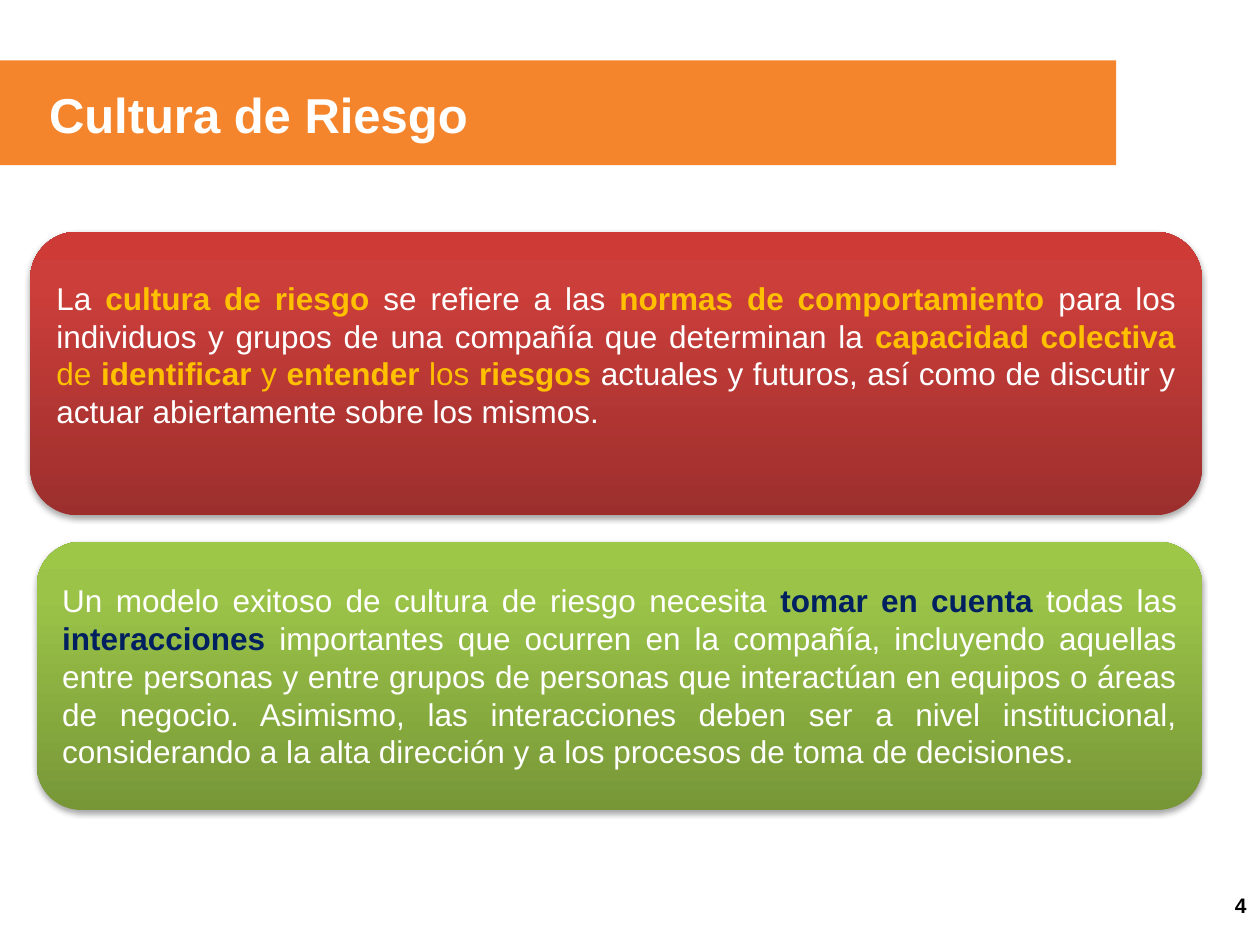
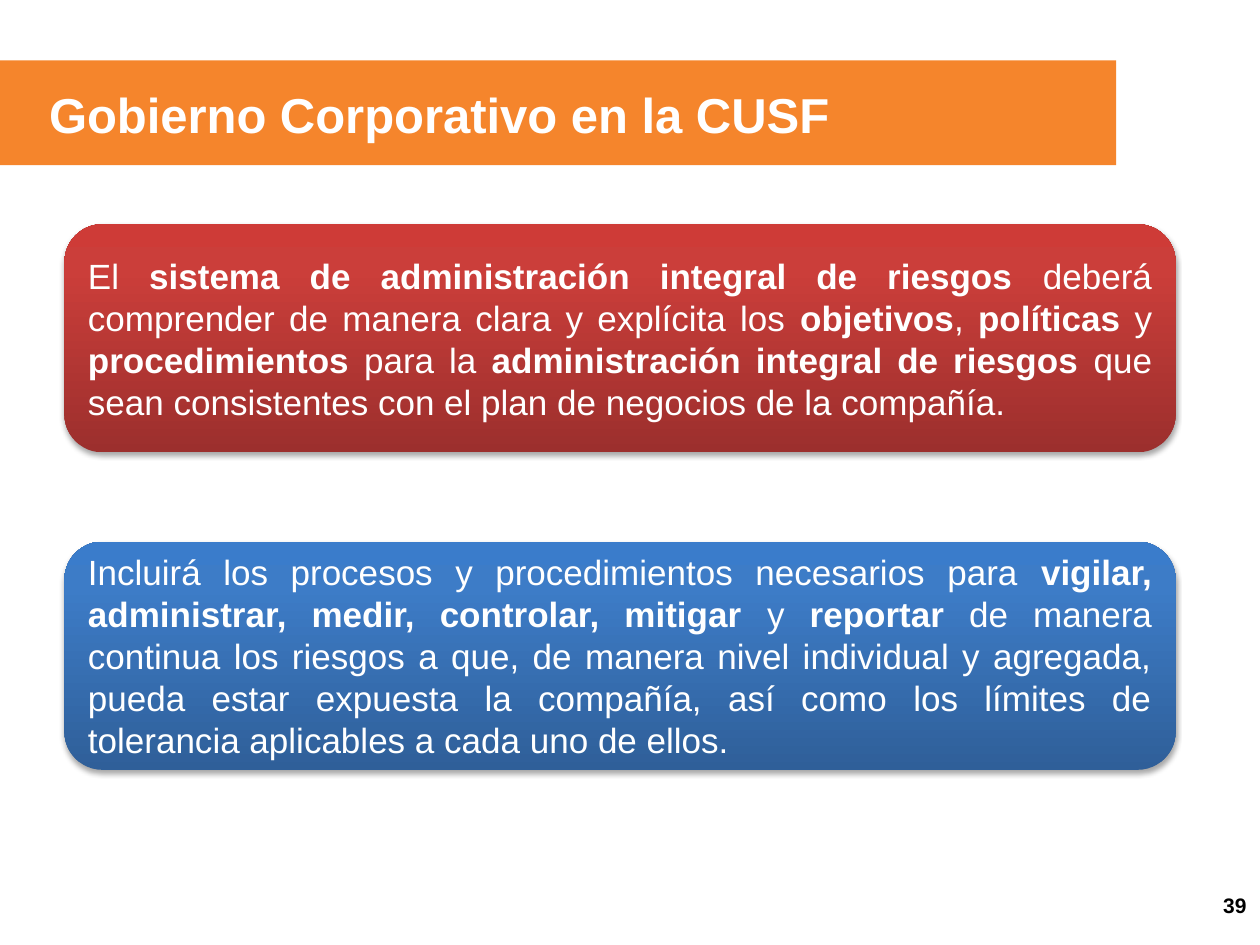
from copy import deepcopy
from dataclasses import dataclass
from typing import NamedTuple

from lxml.etree import SubElement
from pptx import Presentation
from pptx.dml.color import RGBColor
from pptx.enum.shapes import MSO_SHAPE as Shape
from pptx.enum.text import MSO_ANCHOR as Anchor, MSO_AUTO_SIZE as AutoSize, PP_ALIGN as Align
from pptx.oxml.ns import qn
from pptx.util import Cm, Pt

FONT = "Arial"
WHITE, BLACK, ORANGE = "FFFFFF", "000000", "F5852C"
GOLD, NAVY = "FFC000", "002060"

# Gradient colours from the bottom edge to the top edge
GRADIENT_POSITIONS = (0, 0.8, 1)
RED = ("9C2F2D", "CB3E3A", "CE3B37")
GREEN = ("779737", "9BC348", "9DC746")
BLUE = ("2F5F99", "3D7CC7", "3A7CCB")


class Area(NamedTuple):
    left: float
    top: float
    width: float
    height: float

    def lengths(self) -> list[Cm]:
        return [Cm(value) for value in self]


class Phrase(NamedTuple):
    text: str
    color: str = WHITE
    bold: bool = False


@dataclass
class Panel:
    area: Area
    gradient: tuple[str, str, str]
    size: int
    phrases: list[Phrase]
    bottom_inset: float = 0.13


@dataclass
class Page:
    title: str
    number: int
    panels: list[Panel]


BAND = Area(0, 1.22, 22.5, 2.11)
TITLE = Area(0.74, 1.57, 21.77, 1.45)
NUMBER = Area(19.46, 17.73, 5.92, 1.02)
LOWER_TOP = 10.92


def strong(text: str, color: str = WHITE) -> Phrase:
    return Phrase(text, color, True)


def rgb(color: str) -> RGBColor:
    return RGBColor.from_string(color)


def write(paragraph, phrases: list[Phrase], size: int, align=Align.LEFT) -> None:
    paragraph.alignment = align
    for phrase in phrases:
        run = paragraph.add_run()
        run.text = phrase.text
        font = run.font
        font.name, font.size, font.bold = FONT, Pt(size), phrase.bold
        font.color.rgb = rgb(phrase.color)


def add_label(slide, area: Area, phrase: Phrase, size: int, align=Align.LEFT, anchor=Anchor.TOP):
    frame = slide.shapes.add_textbox(*area.lengths()).text_frame
    frame.word_wrap = True
    frame.vertical_anchor = anchor
    write(frame.paragraphs[0], [phrase], size, align)
    return frame


def add_plain_shape(slide, kind: Shape, area: Area):
    """Add a preset shape without outline or inherited shadow."""
    shape = slide.shapes.add_shape(kind, *area.lengths())
    shape.shadow.inherit = False
    shape.line.fill.background()
    return shape


def fill_gradient(shape, colors: tuple[str, str, str]) -> None:
    shape.fill.gradient()
    shape.fill.gradient_angle = 90
    stop_list = next(shape.element.spPr.iter(qn("a:gsLst")))
    stop_list.append(deepcopy(stop_list[-1]))
    for stop, position, color in zip(shape.fill.gradient_stops, GRADIENT_POSITIONS, colors):
        stop.position = position
        stop.color.rgb = rgb(color)


def cast_shadow(shape) -> None:
    effects = shape.element.spPr.find(qn("a:effectLst"))
    shadow = SubElement(effects, qn("a:outerShdw"), blurRad=str(Pt(3.1)), dist=str(Pt(1.8)),
                        dir="5400000", rotWithShape="0")
    tint = SubElement(shadow, qn("a:srgbClr"), val=BLACK)
    SubElement(tint, qn("a:alpha"), val="35000")


def add_panel(slide, panel: Panel) -> None:
    shape = add_plain_shape(slide, Shape.ROUNDED_RECTANGLE, panel.area)
    fill_gradient(shape, panel.gradient)
    cast_shadow(shape)
    frame = shape.text_frame
    frame.word_wrap = True
    frame.vertical_anchor = Anchor.MIDDLE
    frame.margin_bottom = Cm(panel.bottom_inset)
    write(frame.paragraphs[0], panel.phrases, panel.size, Align.JUSTIFY)


def add_page(deck, page: Page) -> None:
    slide = deck.slides.add_slide(deck.slide_layouts[6])
    band = add_plain_shape(slide, Shape.RECTANGLE, BAND)
    band.fill.solid()
    band.fill.fore_color.rgb = rgb(ORANGE)
    title = add_label(slide, TITLE, strong(page.title), 28)
    title.auto_size = AutoSize.SHAPE_TO_FIT_TEXT
    add_label(slide, NUMBER, strong(str(page.number), BLACK), 12, Align.RIGHT, Anchor.MIDDLE)
    for panel in page.panels:
        add_panel(slide, panel)


PAGES = [
    Page("Cultura de Riesgo", 4, [
        Panel(Area(0.61, 4.67, 23.62, 5.72), RED, 18, [
            Phrase("La "),
            strong("cultura de riesgo ", GOLD),
            Phrase("se refiere a las "),
            strong("normas de comportamiento ", GOLD),
            Phrase("para los individuos y grupos de una compañía que determinan la "),
            strong("capacidad colectiva ", GOLD),
            Phrase("de ", GOLD),
            strong("identificar", GOLD),
            Phrase(" y ", GOLD),
            strong("entender", GOLD),
            Phrase(" los ", GOLD),
            strong("riesgos ", GOLD),
            Phrase("actuales y futuros, así como de discutir y actuar abiertamente "
                   "sobre los mismos."),
        ], bottom_inset=0.89),
        Panel(Area(0.74, LOWER_TOP, 23.5, 5.41), GREEN, 18, [
            Phrase("Un modelo exitoso de cultura de riesgo necesita "),
            strong("tomar en cuenta ", NAVY),
            Phrase("todas las "),
            strong("interacciones", NAVY),
            Phrase(" importantes que ocurren en la compañía, incluyendo aquellas entre personas "
                   "y entre grupos de personas que interactúan en equipos o áreas de negocio. "
                   "Asimismo, las interacciones deben ser a nivel institucional, considerando "
                   "a la alta dirección y a los procesos de toma de decisiones."),
        ]),
    ]),
    Page("Gobierno Corporativo en la CUSF", 39, [
        Panel(Area(1.3, 4.52, 22.4, 4.6), RED, 20, [
            Phrase("El "),
            strong("sistema de administración integral de riesgos "),
            Phrase("deberá comprender de manera clara y explícita los "),
            strong("objetivos"),
            Phrase(", "),
            strong("políticas "),
            Phrase("y "),
            strong("procedimientos"),
            Phrase(" para la "),
            strong("administración integral de riesgos "),
            Phrase("que sean consistentes con el plan de negocios de la compañía."),
        ]),
        Panel(Area(1.3, LOWER_TOP, 22.4, 4.6), BLUE, 20, [
            Phrase("Incluirá los procesos y procedimientos necesarios para "),
            strong("vigilar, administrar, medir, controlar, mitigar "),
            Phrase("y "),
            strong("reportar "),
            Phrase("de manera continua los riesgos a que, de manera nivel individual y agregada, "
                   "pueda estar expuesta la compañía, así como los límites de tolerancia "
                   "aplicables a cada uno de ellos."),
        ]),
    ]),
]


def main() -> None:
    deck = Presentation()
    deck.slide_width, deck.slide_height = Cm(25.4), Cm(19.05)
    for page in PAGES:
        add_page(deck, page)
    deck.save("out.pptx")


if __name__ == "__main__":
    main()
